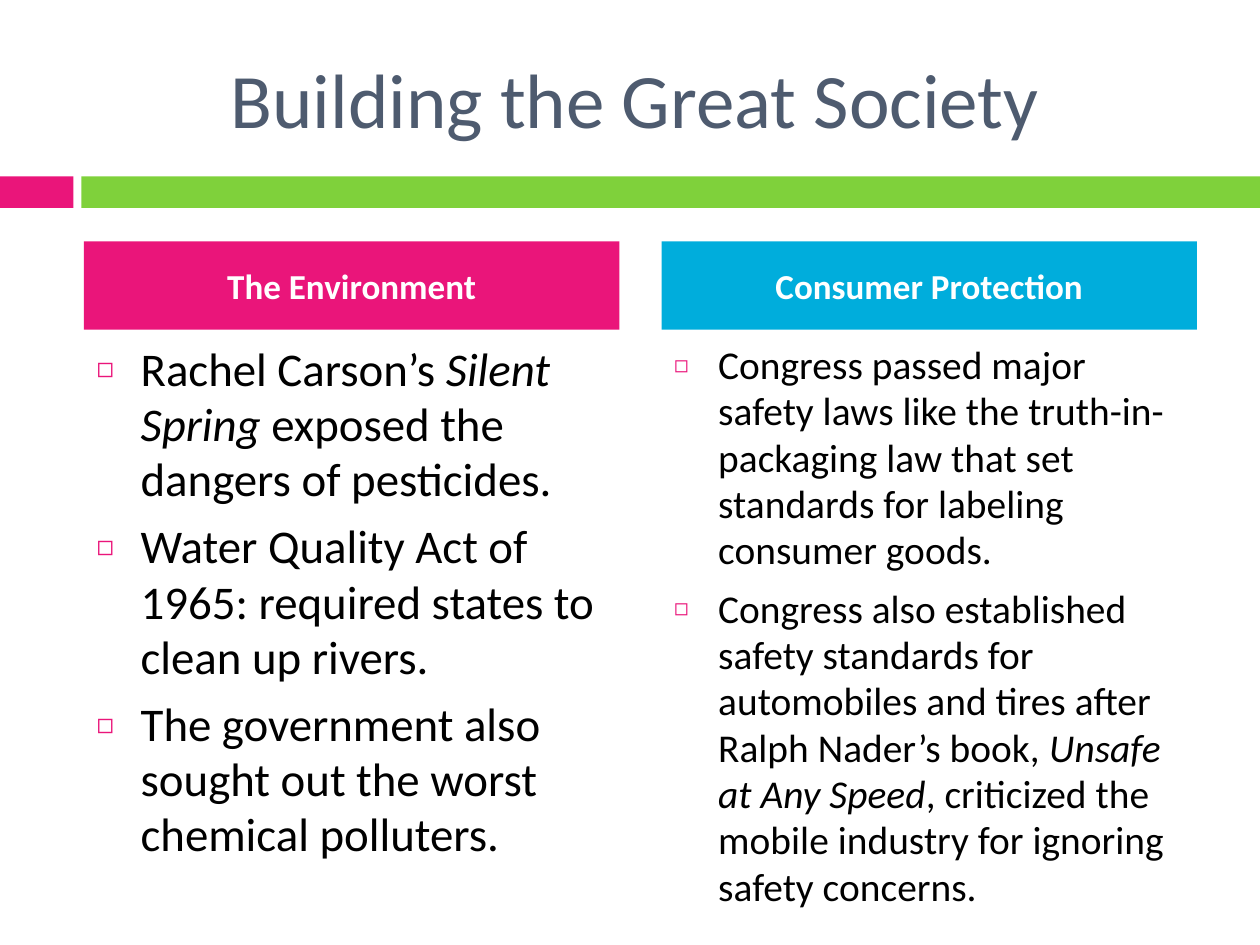
import dataclasses
import lxml.etree
import pptx
import pptx.dml.color
import pptx.enum.shapes
import pptx.enum.text
import pptx.oxml.ns
import pptx.util

Pt = pptx.util.Pt
PINK, GREEN, BLUE = "EA157A", "7FD13B", "00ADDC"
FONT = "Calibri"
COLUMN_WIDTH = 306


@dataclasses.dataclass
class Run:
    text: str
    italic: bool = False


@dataclasses.dataclass
class Column:
    left: float
    heading: str
    fill: str
    size: float
    items: list[list[Run]]


@dataclasses.dataclass
class Band:
    left: float
    width: float
    fill: str


BANDS = [Band(0, 42, PINK), Band(46.5, 673.5, GREEN)]
COLUMNS = [
    Column(48, "The Environment", PINK, 26.8, [
        [Run("Rachel Carson’s "), Run("Silent Spring", True),
         Run(" exposed the dangers of pesticides.")],
        [Run("Water Quality Act of 1965: required states to clean up rivers.")],
        [Run("The government also sought out the worst chemical polluters.")],
    ]),
    Column(378, "Consumer Protection", BLUE, 22.5, [
        [Run("Congress passed major safety laws like the truth-in-packaging law "
             "that set standards for labeling consumer goods.")],
        [Run("Congress also established safety standards for automobiles and tires "
             "after Ralph Nader’s book, "), Run("Unsafe at Any Speed", True),
         Run(", criticized the mobile industry for ignoring safety concerns.")],
    ]),
]


def rgb(color: str) -> pptx.dml.color.RGBColor:
    return pptx.dml.color.RGBColor.from_string(color)


def place(sp, left: float, top: float, width: float, height: float) -> None:
    sp.left, sp.top, sp.width, sp.height = map(Pt, (left, top, width, height))


def fill_solid(sp, color: str) -> None:
    sp.fill.solid()
    sp.fill.fore_color.rgb = rgb(color)


def add_run(p, text: str, size: float, color: str, bold=False, italic=False) -> None:
    r = p.add_run()
    r.text = text
    r.font.name = FONT
    r.font.size = Pt(size)
    r.font.color.rgb = rgb(color)
    r.font.bold = bold
    r.font.italic = italic


def frame(sp, anchor):
    tf = sp.text_frame
    tf.word_wrap = True
    tf.auto_size = pptx.enum.text.MSO_AUTO_SIZE.NONE
    tf.vertical_anchor = anchor
    return tf


def add_centered(sp, text: str, size: float, color: str, bold=False) -> None:
    p = frame(sp, pptx.enum.text.MSO_ANCHOR.MIDDLE).paragraphs[0]
    p.alignment = pptx.enum.text.PP_ALIGN.CENTER
    add_run(p, text, size, color, bold)


def set_bullet(p) -> None:
    qn = pptx.oxml.ns.qn
    pPr = p._p.get_or_add_pPr()
    pPr.set("marL", str(Pt(25.2)))
    pPr.set("indent", str(-Pt(25.2)))
    clr = lxml.etree.SubElement(pPr, qn("a:buClr"))
    lxml.etree.SubElement(clr, qn("a:srgbClr"), val=PINK)
    lxml.etree.SubElement(pPr, qn("a:buSzPct"), val="60000")
    lxml.etree.SubElement(pPr, qn("a:buChar"), char="◻")


def draw_band(s, band: Band) -> None:
    sp = s.shapes.add_shape(pptx.enum.shapes.MSO_SHAPE.RECTANGLE, 0, 0, 0, 0)
    place(sp, band.left, 100.8, band.width, 18)
    sp.shadow.inherit = False
    fill_solid(sp, band.fill)
    sp.line.fill.background()


def draw_column(heading, body, column: Column) -> None:
    place(heading, column.left, 138, COLUMN_WIDTH, 50.4)
    fill_solid(heading, column.fill)
    add_centered(heading, column.heading, 20, "FFFFFF", True)
    place(body, column.left, 192, COLUMN_WIDTH, 282)
    tf = frame(body, pptx.enum.text.MSO_ANCHOR.TOP)
    for i, item in enumerate(column.items):
        p = tf.add_paragraph() if i else tf.paragraphs[0]
        p.space_before = Pt(7)
        p.line_spacing = 0.98
        set_bullet(p)
        for run in item:
            add_run(p, run.text, column.size, "000000", italic=run.italic)


def main() -> None:
    prs = pptx.Presentation()
    prs.slide_width, prs.slide_height = Pt(720), Pt(540)
    s = prs.slides.add_slide(prs.slide_layouts[4])
    title, *parts = list(s.placeholders)[:5]
    for band in BANDS:
        draw_band(s, band)
    place(title, 42, 21.6, 642, 68.4)
    add_centered(title, "Building the Great Society", 44, "4E5B6F")
    for heading, body, column in zip(parts[::2], parts[1::2], COLUMNS):
        draw_column(heading, body, column)
    prs.save("out.pptx")


if __name__ == "__main__":
    main()
